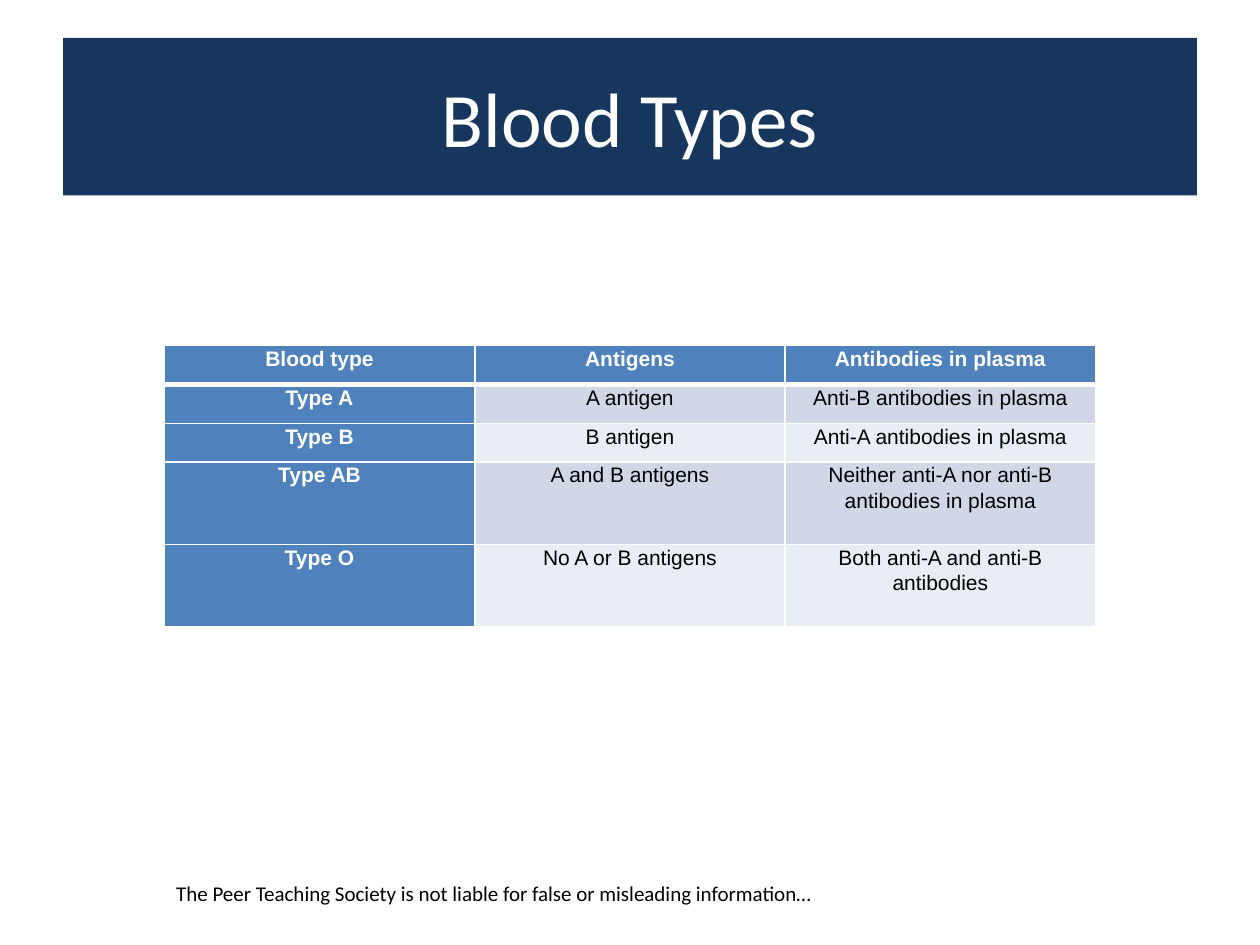
from dataclasses import dataclass

from lxml.etree import SubElement
from pptx import Presentation
from pptx.dml.color import RGBColor
from pptx.enum.text import MSO_ANCHOR, PP_ALIGN
from pptx.oxml.ns import qn
from pptx.util import Pt


@dataclass(frozen=True)
class Theme:
    navy: str = "17365D"
    blue: str = "4F81BD"
    bands: tuple = ("D0D8E8", "E9EDF4")
    white: str = "FFFFFF"
    black: str = "000000"
    title_font: str = "Calibri"
    table_font: str = "Arial"
    title_size: float = 44
    body_size: float = 12
    rule: float = 1
    header_rule: float = 3


THEME = Theme()

BLOOD_TYPES = [
    ("Blood type", "Antigens", "Antibodies in plasma"),
    ("Type A", "A antigen", "Anti-B antibodies in plasma"),
    ("Type B", "B antigen", "Anti-A antibodies in plasma"),
    ("Type AB", "A and B antigens", "Neither anti-A nor anti-B antibodies in plasma"),
    ("Type O", "No A or B antigens", "Both anti-A and anti-B antibodies"),
]
ROW_HEIGHTS = (22.2, 22.2, 22.2, 47, 47)


def apply_format(target, values):
    for name, value in values.items():
        setattr(target, name, value)


def place(part, box):
    names = ("left", "top", "width", "height")
    apply_format(part, dict(zip(names, map(Pt, box))))


def format_font(font, name, size, color, bold=False):
    apply_format(font, {"name": name, "size": Pt(size), "bold": bold})
    font.color.rgb = RGBColor.from_string(color)


def fill_solid(part, color):
    part.fill.solid()
    part.fill.fore_color.rgb = RGBColor.from_string(color)


def border_cell(cell, widths):
    """Draw white borders; widths maps the sides L, R, T, B to points."""
    properties = cell._tc.get_or_add_tcPr()
    for side, width in widths.items():
        line = SubElement(properties, qn(f"a:ln{side}"), w=str(Pt(width)))
        fill = SubElement(line, qn("a:solidFill"))
        SubElement(fill, qn("a:srgbClr"), val=THEME.white)


def add_title_band(slide, box):
    title = slide.shapes.title
    place(title, box)
    fill_solid(title, THEME.navy)
    title.line.fill.background()
    frame = title.text_frame
    frame.text = "Blood Types"
    apply_format(frame, {
        "vertical_anchor": MSO_ANCHOR.MIDDLE,
        "margin_left": Pt(7.2), "margin_right": Pt(7.2),
        "margin_top": Pt(7.2), "margin_bottom": Pt(7.2),
    })
    heading = frame.paragraphs[0]
    heading.alignment = PP_ALIGN.CENTER
    format_font(heading.runs[0].font, THEME.title_font, THEME.title_size, THEME.white)


def format_blood_cell(cell, text, row, column):
    is_label = row == 0 or column == 0
    cell.text = text
    apply_format(cell, {
        "margin_left": Pt(5), "margin_right": Pt(5),
        "margin_top": 0, "margin_bottom": 0,
        "vertical_anchor": MSO_ANCHOR.TOP,
    })
    paragraph = cell.text_frame.paragraphs[0]
    apply_format(paragraph, {
        "alignment": PP_ALIGN.CENTER, "line_spacing": 1.07, "space_after": Pt(8),
    })
    format_font(paragraph.runs[0].font, THEME.table_font, THEME.body_size,
                THEME.white if is_label else THEME.black, is_label)
    # The heavier rule lies between the header and the first blood type
    border_cell(cell, {
        "L": THEME.rule, "R": THEME.rule,
        "T": THEME.header_rule if row == 1 else THEME.rule,
        "B": THEME.header_rule if row == 0 else THEME.rule,
    })
    fill_solid(cell, THEME.blue if is_label else THEME.bands[(row - 1) % 2])


def add_blood_table(slide, box):
    rows, columns = len(BLOOD_TYPES), len(BLOOD_TYPES[0])
    table = slide.shapes.add_table(rows, columns, *map(Pt, box)).table
    for column in table.columns:
        column.width = Pt(box[2] / columns)
    for row, height in zip(table.rows, ROW_HEIGHTS):
        row.height = Pt(height)
    for row, texts in enumerate(BLOOD_TYPES):
        for column, text in enumerate(texts):
            format_blood_cell(table.cell(row, column), text, row, column)


def add_disclaimer(slide, box):
    disclaimer = slide.shapes.add_textbox(*map(Pt, box))
    frame = disclaimer.text_frame
    frame.word_wrap = True
    frame.text = ("The Peer Teaching Society is not liable for false "
                  "or misleading information…")
    format_font(frame.paragraphs[0].runs[0].font,
                THEME.title_font, THEME.body_size, THEME.black)


def main():
    deck = Presentation()
    apply_format(deck, {"slide_width": Pt(720), "slide_height": Pt(540)})
    slide = deck.slides.add_slide(deck.slide_layouts[5])  # title only
    add_disclaimer(slide, (93.6, 499.7, 399, 21.8))
    add_title_band(slide, (36, 21.6, 648, 90))
    add_blood_table(slide, (93.9, 197.5, 532.2, sum(ROW_HEIGHTS)))
    deck.save("out.pptx")


if __name__ == "__main__":
    main()
